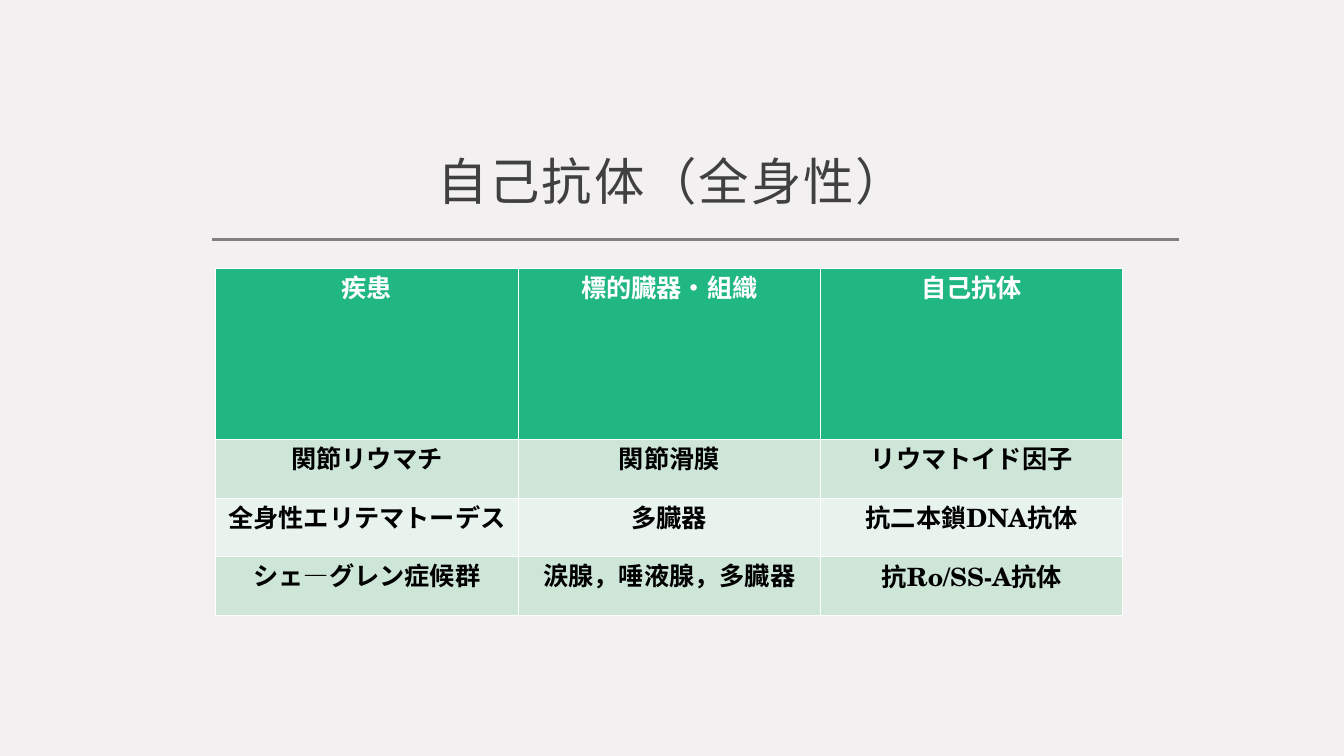
from lxml.etree import SubElement
from pptx import Presentation
from pptx.dml.color import RGBColor
from pptx.enum.shapes import MSO_CONNECTOR as Connector
from pptx.enum.text import MSO_ANCHOR as Anchor, PP_ALIGN as Align
from pptx.oxml.ns import qn
from pptx.util import Inches, Pt

BACKGROUND = RGBColor(0xF3, 0xF0, 0xF1)
RULE_GRAY = RGBColor(0x80, 0x80, 0x80)
TITLE_GRAY = RGBColor(0x40, 0x40, 0x40)
HEADER_GREEN = RGBColor(0x21, 0xB7, 0x82)
BAND_COLORS = (RGBColor(0xE8, 0xF3, 0xED), RGBColor(0xCD, 0xE6, 0xD8))
WHITE = RGBColor(0xFF, 0xFF, 0xFF)
BLACK = RGBColor(0x00, 0x00, 0x00)

JAPANESE_FONT = "Noto Sans CJK JP"
LATIN_FONT = "TeX Gyre Schola"

ANTIBODIES = (
    ("疾患", "標的臓器・組織", "自己抗体"),
    ("関節リウマチ", "関節滑膜", "リウマトイド因子"),
    ("全身性エリテマトーデス", "多臓器", "抗二本鎖DNA抗体"),
    ("シェ―グレン症候群", "涙腺，唾液腺，多臓器", "抗Ro/SS-A抗体"),
)


class SlideBuilder:
    """Draws styled elements on one slide, placed by percent of its size."""

    def __init__(self, presentation):
        self.width = presentation.slide_width
        self.height = presentation.slide_height
        self.slide = presentation.slides.add_slide(presentation.slide_layouts[6])
        fill = self.slide.background.fill
        fill.solid()
        fill.fore_color.rgb = BACKGROUND

    def across(self, percent):
        return round(self.width * percent / 100)

    def down(self, percent):
        return round(self.height * percent / 100)

    def box(self, left, top, width, height):
        return self.across(left), self.down(top), self.across(width), self.down(height)

    def style(self, paragraph, font_name, size, color, bold=False):
        paragraph.alignment = Align.CENTER
        font = paragraph.font
        font.name, font.size, font.bold = font_name, Pt(size), bold
        font.color.rgb = color
        properties = paragraph._p.get_or_add_pPr().get_or_add_defRPr()
        SubElement(properties, qn("a:ea"), typeface=JAPANESE_FONT)
        return properties

    def rule(self, left, right, top):
        line = self.slide.shapes.add_connector(
            Connector.STRAIGHT,
            self.across(left), self.down(top), self.across(right), self.down(top),
        )
        line.line.color.rgb = RULE_GRAY
        line.line.width = Pt(2)
        SubElement(line._element.spPr, qn("a:effectLst"))

    def title(self, text, *place):
        frame = self.slide.shapes.add_textbox(*self.box(*place)).text_frame
        frame.word_wrap = True
        frame.vertical_anchor = Anchor.BOTTOM
        frame.margin_left = frame.margin_right = frame.margin_top = Inches(0.12)
        frame.margin_bottom = Inches(0.1)
        paragraph = frame.paragraphs[0]
        paragraph.text = text
        paragraph.line_spacing = 1.1
        self.style(paragraph, JAPANESE_FONT, 36, TITLE_GRAY).set("spc", "140")

    def table(self, rows, left, top, width, header_height, row_height):
        height = header_height + row_height * (len(rows) - 1)
        table = self.slide.shapes.add_table(
            len(rows), len(rows[0]), *self.box(left, top, width, height)
        ).table
        table.horz_banding = False
        for row_index, texts in enumerate(rows):
            is_header = row_index == 0
            table.rows[row_index].height = self.down(header_height if is_header else row_height)
            fill = HEADER_GREEN if is_header else BAND_COLORS[row_index % 2]
            color = WHITE if is_header else BLACK
            for column_index, text in enumerate(texts):
                self.cell(table.cell(row_index, column_index), text, fill, color)

    def cell(self, cell, text, fill, color):
        cell.margin_left = cell.margin_right = Inches(0.07)
        cell.margin_top = cell.margin_bottom = 0
        properties = cell._tc.get_or_add_tcPr()
        for side in "LRTB":
            border = SubElement(properties, qn(f"a:ln{side}"), w=str(Pt(1)))
            SubElement(SubElement(border, qn("a:solidFill")), qn("a:srgbClr"), val=str(WHITE))
        cell.fill.solid()
        cell.fill.fore_color.rgb = fill
        paragraph = cell.text_frame.paragraphs[0]
        paragraph.text = text
        self.style(paragraph, LATIN_FONT, 18, color, bold=True)


def main():
    presentation = Presentation()
    presentation.slide_width = Inches(13.33)
    presentation.slide_height = Inches(7.5)
    builder = SlideBuilder(presentation)
    builder.rule(15.75, 87.7, 31.7)
    builder.title("自己抗体（全身性）", 16.25, 12.5, 67.5, 16.7)
    builder.table(ANTIBODIES, 16.05, 35.5, 67.5, 22.65, 7.75)
    presentation.save("out.pptx")


if __name__ == "__main__":
    main()
